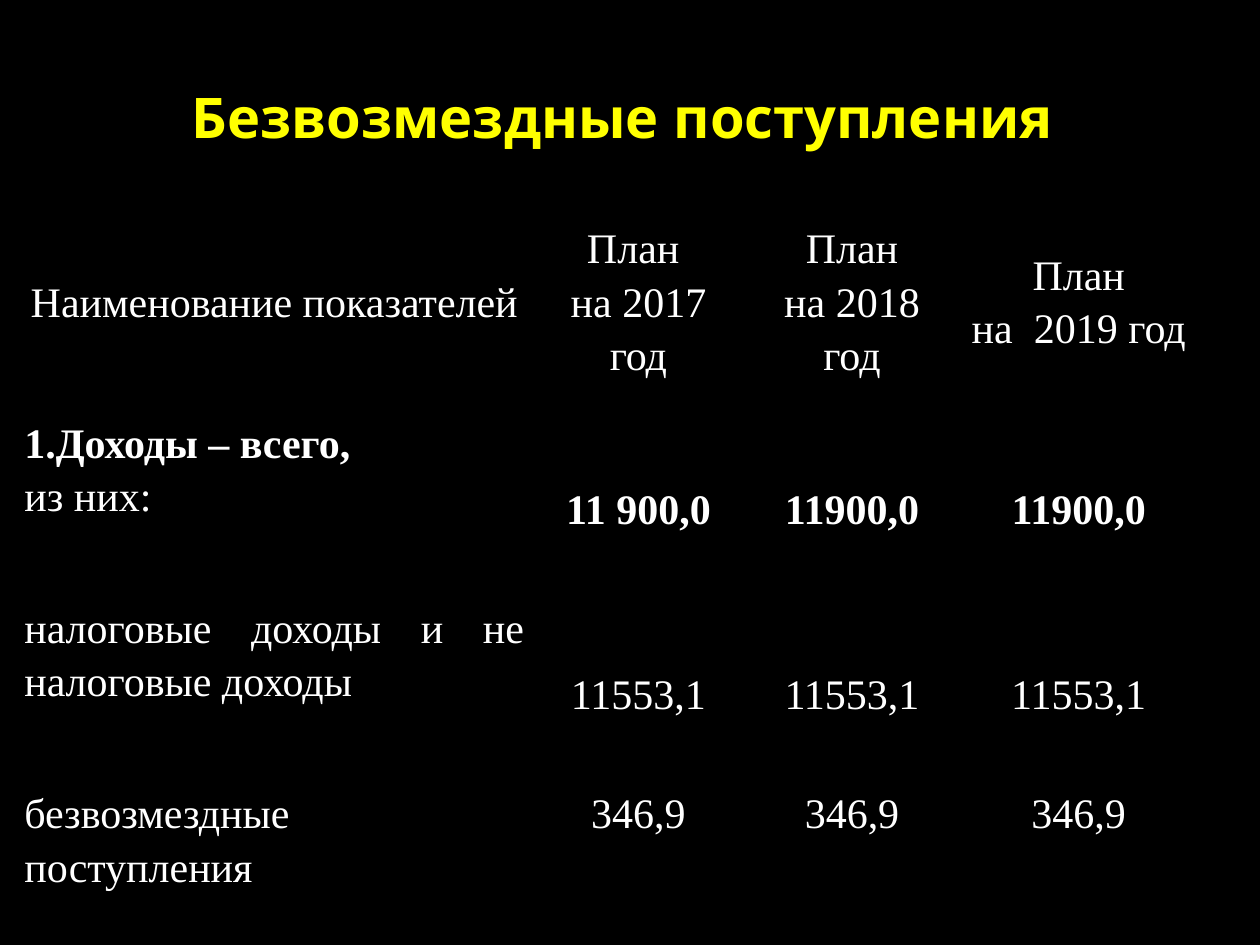
import dataclasses

import pptx
import pptx.dml.color
import pptx.enum.text
import pptx.oxml
import pptx.oxml.ns
import pptx.util

Cm, Pt = pptx.util.Cm, pptx.util.Pt
Align = pptx.enum.text.PP_ALIGN
Anchor = pptx.enum.text.MSO_ANCHOR
BLACK, WHITE, YELLOW = "000000", "FFFFFF", "FFFF00"
WIDTHS = (10.46, 4.22, 4.39, 4.75)


@dataclasses.dataclass(frozen=True)
class Row:
    height: float
    cells: tuple[str, ...]
    bold: bool = False  # applies to the first line of each cell
    head: bool = False
    anchor: Anchor = Anchor.MIDDLE  # of the value cells


ROWS = (
    Row(4.62, ("Наименование показателей", "План \nна 2017 год",
               "План\nна 2018 год", "План\nна  2019 год"), head=True),
    Row(3.73, ("1.Доходы – всего, \nиз них:", "11 900,0", "11900,0", "11900,0"),
        bold=True),
    Row(3.73, ("налоговые доходы и не налоговые доходы",) + ("11553,1",) * 3),
    Row(2.49, ("безвозмездные поступления",) + ("346,9",) * 3, anchor=Anchor.TOP),
)


def color(code: str) -> pptx.dml.color.RGBColor:
    return pptx.dml.color.RGBColor.from_string(code)


def style(para, name: str, size: float, code: str, bold: bool, align: Align) -> None:
    para.alignment = align
    font = para.font
    font.name, font.size, font.bold = name, Pt(size), bold
    font.color.rgb = color(code)


def border(cell, code: str, width: float) -> None:
    props = cell._tc.get_or_add_tcPr()
    space = pptx.oxml.ns.nsdecls("a")
    for spot, side in enumerate(("lnL", "lnR", "lnT", "lnB")):
        props.insert(spot, pptx.oxml.parse_xml(
            f'<a:{side} {space} w="{Pt(width)}"><a:solidFill>'
            f'<a:srgbClr val="{code}"/></a:solidFill></a:{side}>'))


def draw_cell(cell, row: Row, label: bool) -> None:
    """Fill one cell; a label is a justified row name at the left."""
    cell.fill.background()
    border(cell, BLACK, 1)
    cell.margin_left = cell.margin_right = Cm(0.19)
    cell.margin_top = cell.margin_bottom = 0
    cell.vertical_anchor = Anchor.TOP if label else row.anchor
    align = Align.JUSTIFY if label else Align.CENTER
    for spot, para in enumerate(cell.text_frame.paragraphs):
        para.line_spacing = 1.15
        style(para, "Times New Roman", 24, WHITE, row.bold and spot == 0, align)


def draw_table(slide, rows: tuple[Row, ...]) -> None:
    table = slide.shapes.add_table(
        len(rows), len(WIDTHS), Cm(0.3), Cm(3.73),
        Cm(sum(WIDTHS)), Cm(sum(row.height for row in rows))).table
    table.first_row = table.horz_banding = False
    for col, width in zip(table.columns, WIDTHS):
        col.width = Cm(width)
    for y, row in enumerate(rows):
        table.rows[y].height = Cm(row.height)
        for x, text in enumerate(row.cells):
            cell = table.cell(y, x)
            cell.text = text
            draw_cell(cell, row, label=x == 0 and not row.head)


def draw_title(slide, text: str) -> None:
    title = slide.shapes.title
    title.left, title.top = Cm(1.27), Cm(0.76)
    title.width, title.height = Cm(22.86), Cm(3.18)
    title.text_frame.text = text
    title.text_frame.vertical_anchor = Anchor.MIDDLE
    style(title.text_frame.paragraphs[0], "Noto Sans", 32, YELLOW, True, Align.CENTER)


def main() -> None:
    deck = pptx.Presentation()
    deck.slide_width, deck.slide_height = Cm(25.4), Cm(19.05)
    slide = deck.slides.add_slide(deck.slide_layouts[5])
    slide.background.fill.solid()
    slide.background.fill.fore_color.rgb = color(BLACK)
    draw_title(slide, "Безвозмездные поступления ")
    draw_table(slide, ROWS)
    deck.save("out.pptx")


if __name__ == "__main__":
    main()
